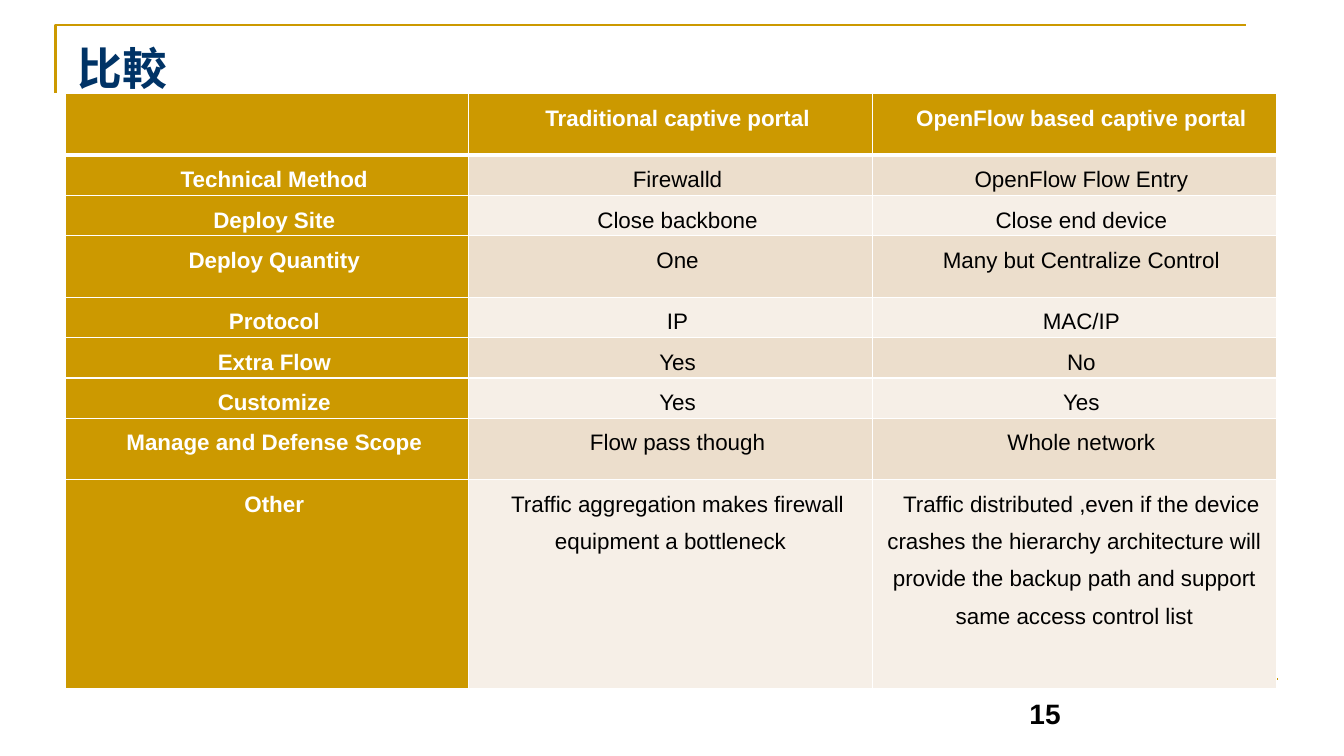
import pptx
import pptx.util
import pptx.dml.color
import pptx.enum.shapes
import pptx.enum.text
import pptx.oxml.ns
import lxml.etree

Inches = pptx.util.Inches
Pt = pptx.util.Pt
CENTER = pptx.enum.text.PP_ALIGN.CENTER

COLORS = {
    "gold": "CC9900",
    "rule": "C89600",
    "navy": "003366",
    "white": "FFFFFF",
    "black": "000000",
    "band_dark": "ECDECC",
    "band_light": "F6EFE7",
}

COMPARISON = [
    ("", "Traditional captive portal", "OpenFlow based captive portal"),
    ("Technical Method", "Firewalld", "OpenFlow Flow Entry"),
    ("Deploy Site", "Close backbone", "Close end device"),
    ("Deploy Quantity", "One", "Many but Centralize Control"),
    ("Protocol", "IP", "MAC/IP"),
    ("Extra Flow", "Yes", "No"),
    ("Customize", "Yes", "Yes"),
    ("Manage and Defense Scope", "Flow pass though", "Whole network"),
    ("Other", "Traffic aggregation makes firewall equipment a bottleneck",
     "Traffic distributed ,even if the device crashes the hierarchy architecture will "
     "provide the backup path and support same access control list"),
]
COLUMN_WIDTHS = [4, 4, 4.01]
ROW_HEIGHTS = [0.61, 0.39, 0.39, 0.61, 0.39, 0.39, 0.39, 0.61, 2.07]


def rgb(name):
    return pptx.dml.color.RGBColor.from_string(COLORS[name])


def apply_format(target, values):
    for key, value in values.items():
        setattr(target, key, value)


def add_child(parent, tag, **attributes):
    return lxml.etree.SubElement(parent, pptx.oxml.ns.qn(tag), attributes)


def write_text(paragraph, text, size, color, bold, font="Arial"):
    run = paragraph.add_run()
    run.text = text
    apply_format(run.font, {"name": font, "size": Pt(size), "bold": bold})
    run.font.color.rgb = rgb(color)
    return run


def style_line(line, color, width):
    line.color.rgb = rgb(color)
    line.width = Pt(width)


def add_corner_frame(slide):
    builder = slide.shapes.build_freeform(Inches(0.55), Inches(0.92))
    builder.add_line_segments(
        [(Inches(0.55), Inches(0.25)), (Inches(12.36), Inches(0.25))], close=False)
    frame = builder.convert_to_shape()
    frame.shadow.inherit = False
    frame.fill.background()
    style_line(frame.line, "gold", 1.5)


def add_page_number(slide, number):
    badge = slide.shapes.add_shape(
        pptx.enum.shapes.MSO_SHAPE.RECTANGLE,
        Inches(10.06), Inches(6.86), Inches(0.61), Inches(0.44))
    badge.shadow.inherit = False
    badge.fill.solid()
    badge.fill.fore_color.rgb = rgb("white")
    badge.line.fill.background()
    badge.text_frame.auto_size = pptx.enum.text.MSO_AUTO_SIZE.SHAPE_TO_FIT_TEXT
    paragraph = badge.text_frame.paragraphs[0]
    paragraph.alignment = CENTER
    write_text(paragraph, number, 20, "black", True)


def add_footer_rule(slide):
    rule = slide.shapes.add_connector(
        pptx.enum.shapes.MSO_CONNECTOR.STRAIGHT,
        Inches(0.68), Inches(6.74), Inches(12.68), Inches(6.74))
    style_line(rule.line, "rule", 1.5)
    add_child(rule._element.spPr, "a:effectLst")


def add_title(slide, text):
    title = slide.shapes.add_textbox(Inches(0.67), Inches(0.3), Inches(12), Inches(1.25))
    margin = Inches(0.1)
    apply_format(title.text_frame, {
        "word_wrap": True, "margin_left": margin, "margin_right": margin,
        "margin_top": margin, "margin_bottom": margin})
    font = "Noto Sans CJK SC"
    run = write_text(title.text_frame.paragraphs[0], text, 32, "navy", True, font)
    add_child(run.font._element, "a:ea", typeface=font)


def set_borders(cell, top, bottom):
    properties = cell._tc.get_or_add_tcPr()
    for side, width in {"L": 1, "R": 1, "T": top, "B": bottom}.items():
        border = add_child(properties, f"a:ln{side}", w=str(Pt(width)))
        fill = add_child(border, "a:solidFill")
        add_child(fill, "a:srgbClr", val=COLORS["white"])


def fill_cell(cell, text, row, column):
    heading = row == 0 or column == 0
    apply_format(cell, {
        "margin_left": Inches(0.07), "margin_right": Inches(0.07),
        "margin_top": 0, "margin_bottom": 0})
    set_borders(cell, top=3 if row == 1 else 1, bottom=3 if row == 0 else 1)
    band = "band_dark" if row % 2 else "band_light"
    cell.fill.solid()
    cell.fill.fore_color.rgb = rgb("gold" if heading else band)
    if text:
        paragraph = cell.text_frame.paragraphs[0]
        apply_format(paragraph, {"alignment": CENTER, "line_spacing": 1.5})
        paragraph._p.get_or_add_pPr().set("indent", str(Inches(0.14)))
        write_text(paragraph, text, 16, "white" if heading else "black", heading)


def add_comparison_table(slide):
    table = slide.shapes.add_table(
        len(COMPARISON), len(COLUMN_WIDTHS), Inches(0.65), Inches(0.93),
        Inches(sum(COLUMN_WIDTHS)), Inches(sum(ROW_HEIGHTS))).table
    table.first_col = True
    for column, width in zip(table.columns, COLUMN_WIDTHS):
        column.width = Inches(width)
    for row, height in zip(table.rows, ROW_HEIGHTS):
        row.height = Inches(height)
    for row, texts in enumerate(COMPARISON):
        for column, text in enumerate(texts):
            fill_cell(table.cell(row, column), text, row, column)


def main():
    presentation = pptx.Presentation()
    apply_format(presentation, {"slide_width": Inches(13.33), "slide_height": Inches(7.5)})
    slide = presentation.slides.add_slide(presentation.slide_layouts[6])
    add_corner_frame(slide)
    add_page_number(slide, "15")
    add_footer_rule(slide)
    add_title(slide, "比較")
    add_comparison_table(slide)
    presentation.save("out.pptx")


if __name__ == "__main__":
    main()
